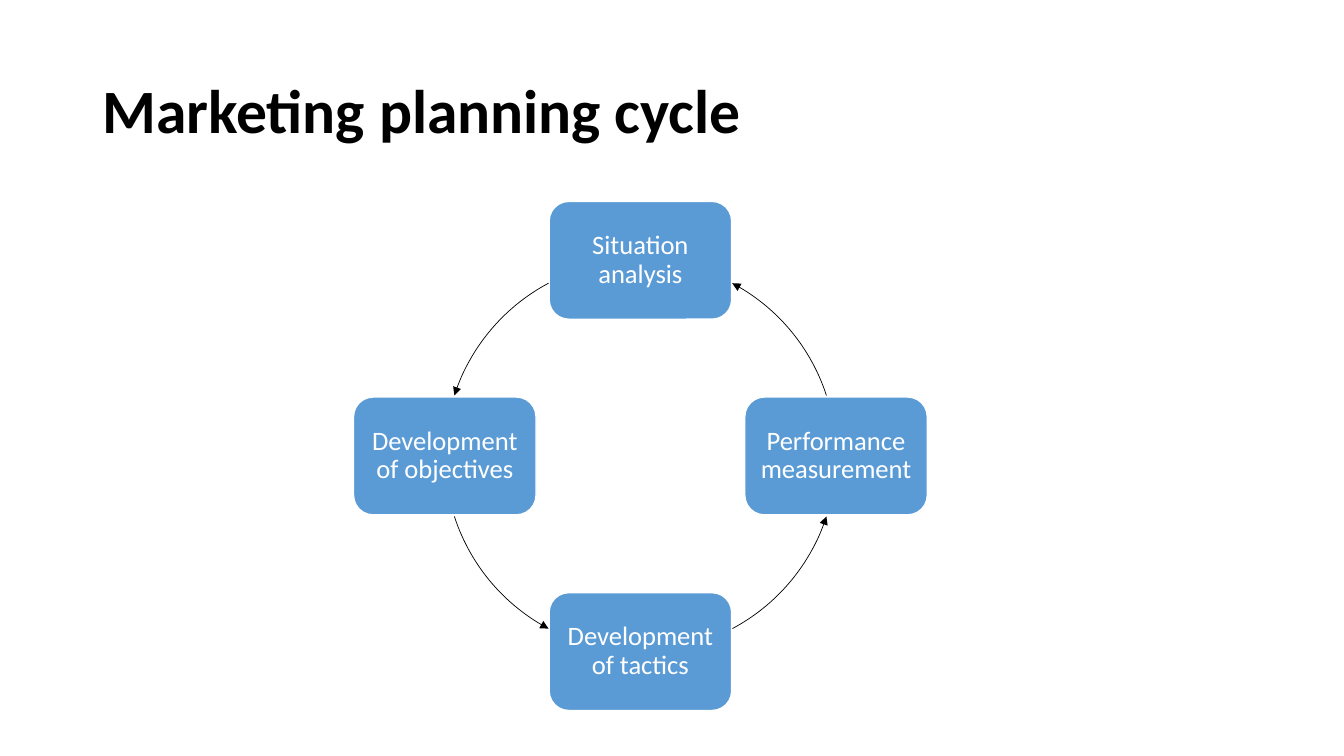
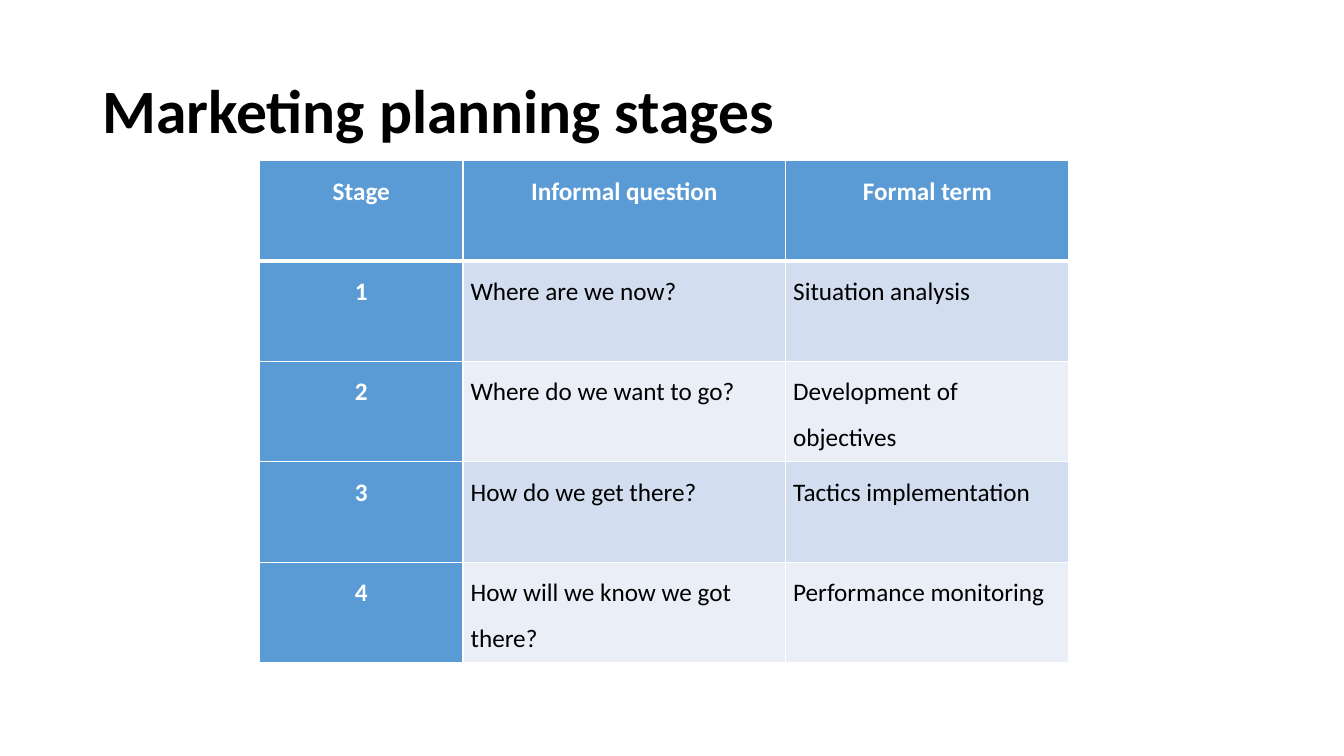
from lxml.etree import SubElement
from math import cos, radians, sin
from pptx import Presentation
from pptx.dml.color import RGBColor
from pptx.enum.shapes import MSO_SHAPE
from pptx.enum.text import MSO_ANCHOR, PP_ALIGN
from pptx.oxml.ns import qn
from pptx.util import Cm, Pt

FONT = "Calibri"
COLORS = {
    "blue": "5B9BD5",
    "mid": "D2DEEF",
    "pale": "EAEFF7",
    "white": "FFFFFF",
    "black": "000000",
}

# Clockwise from the top
STEPS = [
    "Situation analysis",
    "Performance measurement",
    "Development of tactics",
    "Development of objectives",
]
STAGES = [
    ("Stage", "Informal question", "Formal term"),
    ("1", "Where are we now?", "Situation analysis"),
    ("2", "Where do we want to go?", "Development of objectives"),
    ("3", "How do we get there?", "Tactics implementation"),
    ("4", "How will we know we got there?", "Performance monitoring"),
]

# Lengths in centimetres, angles in degrees
MID_X, MID_Y, RADIUS = 16.14, 11.49, 4.93
BOX_W, BOX_H = 4.6, 2.97
GAP = 18
COLS = (5.13, 8.13, 7.14)
ROW_H = 2.53


def color(name):
    return RGBColor.from_string(COLORS[name])


def write(frame, text, size, ink, bold=False, align=PP_ALIGN.LEFT, spacing=0.9):
    para = frame.paragraphs[0]
    para.alignment = align
    para.line_spacing = spacing
    run = para.add_run()
    run.text = text
    font = run.font
    font.name, font.size, font.bold = FONT, Pt(size), bold
    font.color.rgb = color(ink)


def add_page(deck, title):
    page = deck.slides.add_slide(deck.slide_layouts[6])
    frame = page.shapes.add_textbox(Cm(2.33), Cm(1.01), Cm(29.21), Cm(3.68)).text_frame
    frame.word_wrap = True
    frame.vertical_anchor = MSO_ANCHOR.MIDDLE
    write(frame, title, 44, "black", bold=True)
    return page


def add_form(page, kind, mid, size, line, width):
    """Add a shape by its centre, without shadow."""
    (x, y), (w, h) = mid, size
    form = page.shapes.add_shape(kind, Cm(x - w / 2), Cm(y - h / 2), Cm(w), Cm(h))
    form.shadow.inherit = False
    form.line.color.rgb = color(line)
    form.line.width = Pt(width)
    return form


def add_step(page, text, angle):
    turn = radians(angle)
    mid = MID_X + RADIUS * cos(turn), MID_Y + RADIUS * sin(turn)
    box = add_form(page, MSO_SHAPE.ROUNDED_RECTANGLE, mid, (BOX_W, BOX_H), "white", 1)
    box.fill.solid()
    box.fill.fore_color.rgb = color("blue")
    frame = box.text_frame
    frame.word_wrap = True
    frame.vertical_anchor = MSO_ANCHOR.MIDDLE
    frame.margin_left = frame.margin_right = Cm(0.19)
    frame.margin_top = frame.margin_bottom = Cm(0.19)
    write(frame, text, 19, "white", align=PP_ALIGN.CENTER)


def add_arc(page, start, end):
    """Add a clockwise arc whose arrowhead is at its start."""
    size = (2 * RADIUS, 2 * RADIUS)
    arc = add_form(page, MSO_SHAPE.ARC, (MID_X, MID_Y), size, "black", 0.5)
    arc.fill.background()
    for i, angle in enumerate((start, end)):
        arc.adjustments[i] = angle % 360 * 0.6  # 60000 units a degree, scaled by 100000
    line = arc.element.spPr.find(qn("a:ln"))
    SubElement(line, qn("a:headEnd"), type="triangle")


def add_border(cell, side, width):
    props = cell._tc.get_or_add_tcPr()
    line = SubElement(props, qn("a:ln" + side), w=str(Pt(width)))
    fill = SubElement(line, qn("a:solidFill"))
    SubElement(fill, qn("a:srgbClr"), val=COLORS["white"])


def fill_cell(cell, text, row, col):
    head = row == 0 or col == 0
    edges = {"L": 1, "R": 1, "T": 3 if row == 1 else 1, "B": 3 if row == 0 else 1}
    for side, width in edges.items():
        add_border(cell, side, width)
    cell.fill.solid()
    cell.fill.fore_color.rgb = color("blue" if head else "mid" if row % 2 else "pale")
    cell.margin_left = cell.margin_right = Cm(0.19)
    cell.margin_top = cell.margin_bottom = 0
    write(cell.text_frame, text, 18, "white" if head else "black", bold=head,
          align=PP_ALIGN.CENTER if head else PP_ALIGN.LEFT, spacing=1.5)


def add_cycle(deck):
    page = add_page(deck, "Marketing planning cycle")
    turn = 360 / len(STEPS)
    for i, text in enumerate(STEPS):
        angle = i * turn - 90
        add_step(page, text, angle)
        # Boxes are wider than high, so arcs keep further off the top and bottom ones
        near, far = (28, GAP) if i % 2 == 0 else (GAP, 28)
        add_arc(page, angle + near, angle + turn - far)


def add_stages(deck):
    page = add_page(deck, "Marketing planning stages")
    table = page.shapes.add_table(
        len(STAGES), len(COLS), Cm(6.54), Cm(4.05), Cm(sum(COLS)), Cm(ROW_H * len(STAGES))
    ).table
    for col, width in zip(table.columns, COLS):
        col.width = Cm(width)
    for r, texts in enumerate(STAGES):
        table.rows[r].height = Cm(ROW_H)
        for c, text in enumerate(texts):
            fill_cell(table.cell(r, c), text, r, c)


def main():
    deck = Presentation()
    deck.slide_width, deck.slide_height = Cm(33.87), Cm(19.05)
    add_cycle(deck)
    add_stages(deck)
    deck.save("out.pptx")


if __name__ == "__main__":
    main()
